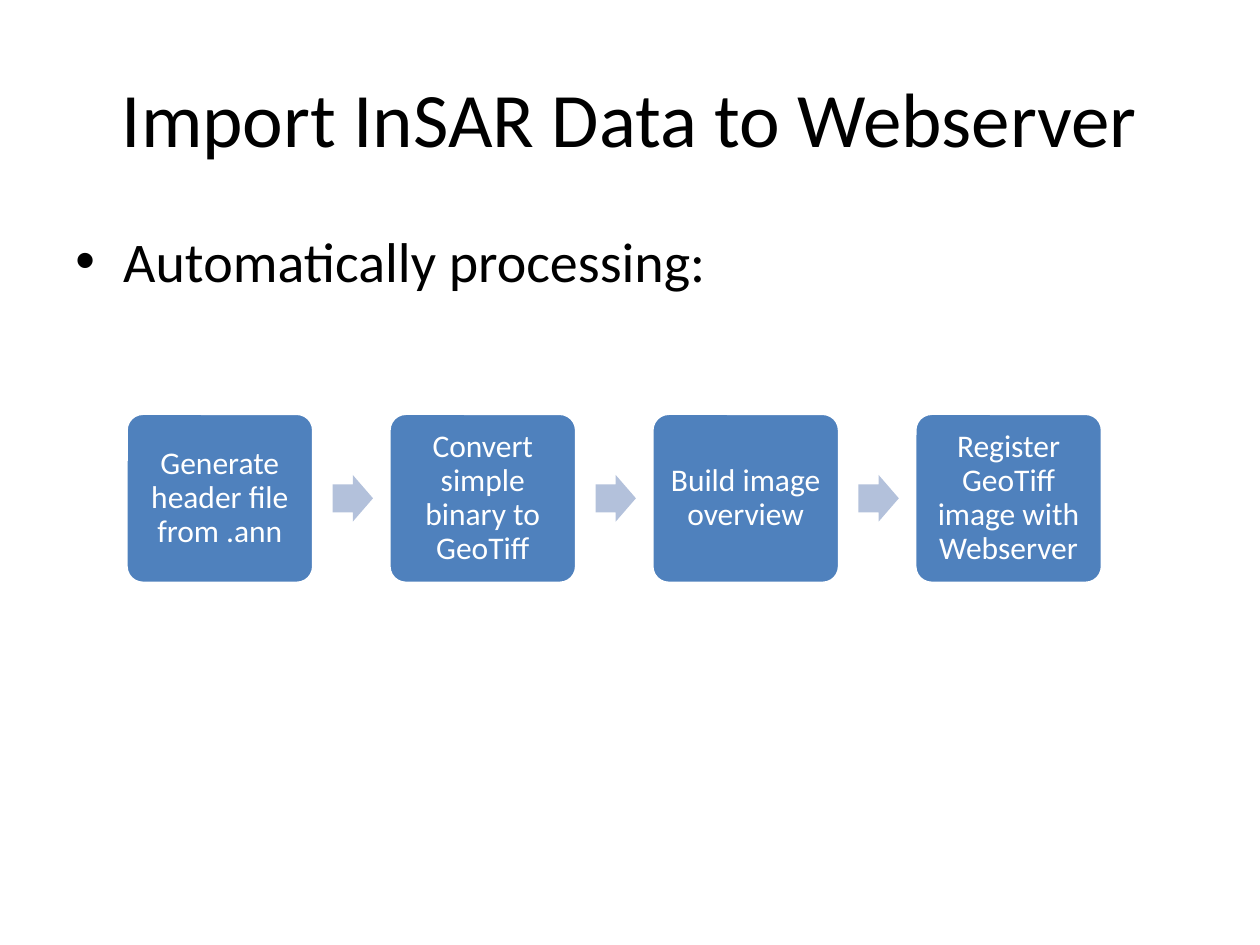
from pptx import Presentation
from pptx.dml.color import RGBColor
from pptx.enum.shapes import MSO_SHAPE as Shape
from pptx.enum.text import MSO_ANCHOR as Anchor, PP_ALIGN as Align
from pptx.oxml.ns import qn
from pptx.util import Inches, Pt
from lxml.etree import SubElement

# Content
TITLE = "Import InSAR Data to Webserver"
BULLET = "Automatically processing:"
STEPS = [
    "Generate header file from .ann",
    "Convert simple binary to GeoTiff",
    "Build image overview",
    "Register GeoTiff image with Webserver",
]

THEME = {
    "font": "Calibri",
    "text": "000000", "step": "4F81BD", "step_text": "FFFFFF", "arrow": "B3C1DB",
    "title_size": 44, "bullet_size": 32, "step_size": 18,
}

# Flow geometry in inches
FLOW_LEFT, FLOW_RIGHT, FLOW_TOP = 1, 8.75, 3.28
STEP_W, STEP_H = 1.49, 1.35
ARROW_W, ARROW_H, ARROW_GAP = 0.32, 0.37, 0.15
PITCH = (FLOW_RIGHT - FLOW_LEFT - STEP_W) / (len(STEPS) - 1)


def write(frame, text, size, color, align, anchor, **frame_format):
    frame_format = {"word_wrap": True, "vertical_anchor": anchor, **frame_format}
    for name, value in frame_format.items():
        setattr(frame, name, value)
    para = frame.paragraphs[0]
    para.alignment = align
    span = para.add_run()
    span.text = text
    for name, value in {"name": THEME["font"], "size": Pt(size)}.items():
        setattr(span.font, name, value)
    span.font.color.rgb = RGBColor.from_string(color)
    return para


def add_block(page, kind, left, top, width, height, color, adjustments):
    block = page.shapes.add_shape(
        kind, Inches(left), Inches(top), Inches(width), Inches(height))
    block.shadow.inherit = False
    block.fill.solid()
    block.fill.fore_color.rgb = RGBColor.from_string(color)
    block.line.fill.background()
    for index, value in enumerate(adjustments):
        block.adjustments[index] = value
    return block


def main():
    deck = Presentation()
    deck.slide_width, deck.slide_height = Inches(10), Inches(7.5)
    page = deck.slides.add_slide(deck.slide_layouts[5])

    # Title
    title = page.shapes.title
    title.left, title.top = Inches(0.5), Inches(0.3)
    title.width, title.height = Inches(9), Inches(1.25)
    write(title.text_frame, TITLE, THEME["title_size"], THEME["text"],
          Align.CENTER, Anchor.MIDDLE)

    # Bullet
    body = page.shapes.add_textbox(Inches(0.5), Inches(1.75), Inches(9), Inches(4.95))
    para = write(body.text_frame, BULLET, THEME["bullet_size"], THEME["text"],
                 Align.LEFT, Anchor.TOP)
    props = para._p.get_or_add_pPr()
    props.set("marL", str(Inches(0.38)))
    props.set("indent", str(-Inches(0.38)))
    SubElement(props, qn("a:buFont"), typeface="Arial")
    SubElement(props, qn("a:buChar"), char="•")

    # Process flow: rounded steps with an arrow in each gap
    inset = Inches(0.07)
    margins = {f"margin_{side}": inset for side in ("left", "right", "top", "bottom")}
    for index, step in enumerate(STEPS):
        left = FLOW_LEFT + index * PITCH
        box = add_block(page, Shape.ROUNDED_RECTANGLE, left, FLOW_TOP,
                        STEP_W, STEP_H, THEME["step"], [0.1])
        box.line.color.rgb = RGBColor.from_string(THEME["step_text"])
        box.line.width = Pt(2)
        para = write(box.text_frame, step, THEME["step_size"], THEME["step_text"],
                     Align.CENTER, Anchor.MIDDLE, **margins)
        para.line_spacing = 0.9
        if index < len(STEPS) - 1:
            add_block(page, Shape.RIGHT_ARROW, left + STEP_W + ARROW_GAP,
                      FLOW_TOP + (STEP_H - ARROW_H) / 2, ARROW_W, ARROW_H,
                      THEME["arrow"], [0.6, 0.5])

    deck.save("out.pptx")


if __name__ == "__main__":
    main()
